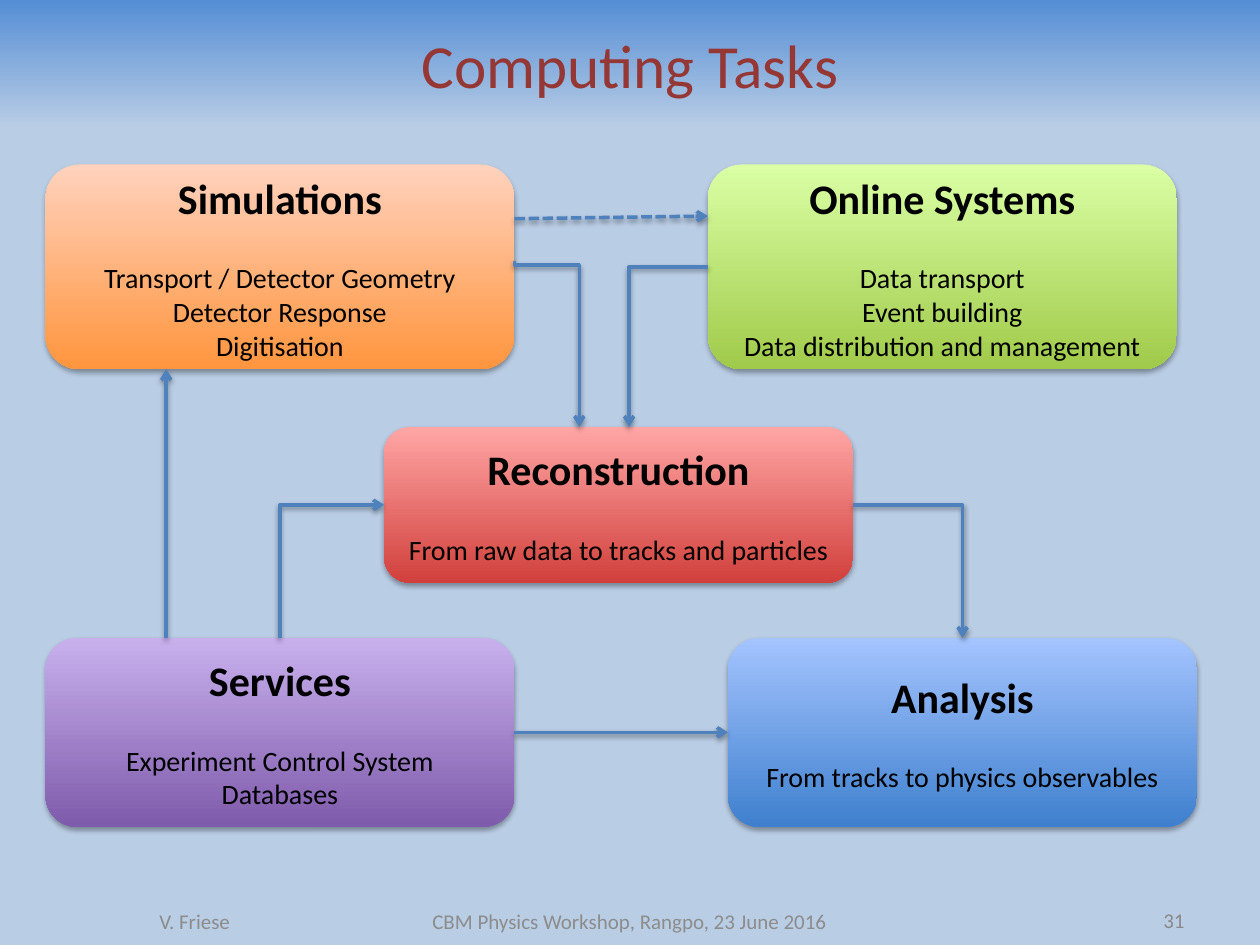
"""Build the Computing Tasks slide: five task boxes linked by arrows."""
from lxml import etree
from pptx import Presentation
from pptx.dml.color import RGBColor
from pptx.enum import dml, shapes, text
from pptx.oxml.ns import qn
from pptx.util import Pt

FONT = "Calibri"
COLORS = {
    "background": "B9CDE5", "banner": "558ED5", "title": "953735",
    "footer": "8C8C8C", "number": "898989", "body": "000000", "arrow": "4F81BD",
}
TITLE = "Computing Tasks"
BOX_WIDTH = 268
TASKS = [
    ("Reconstruction", ["From raw data to tracks and particles"],
     (219.5, 244, 89), ("FFA6A5", "D1403C")),
    ("Simulations", ["Transport / Detector Geometry", "Detector Response", "Digitisation"],
     (26, 94, 117), ("FFD2BD", "FF953E")),
    ("Analysis", ["From tracks to physics observables"],
     (416, 364.5, 108), ("A4C4FF", "3F80CE")),
    ("Online Systems",
     ["Data transport", "Event building", "Data distribution and management"],
     (404.5, 94, 117), ("DAFFA5", "A0CA4A")),
    ("Services", ["Experiment Control System", "Databases"],
     (26, 364.5, 108), ("C8B0ED", "7F5BAB")),
]
ELBOWS = [
    ((294, 149), (331, 244), "bentConnector3", 270, ["flipH"], 2600),
    ((404.5, 152.5), (359.5, 244), "bentConnector2", 180, ["flipV"], None),
    ((160, 364.5), (219.5, 288.5), "bentConnector2", 90, ["flipH", "flipV"], None),
    ((294, 418.5), (416, 418.5), "bentConnector3", 0, [], None),
    ((487.5, 288.5), (550, 364.5), "bentConnector2", 0, [], None),
]
STRAIGHTS = [
    ((294, 125), (404.5, 123.5), True),
    ((95, 364.5), (95, 211), False),
]
FOOTERS = [
    ("CBM Physics Workshop, Rangpo, 23 June 2016", (217.5, 512, 284.5, 29), "CENTER", "footer"),
    ("V. Friese", (36, 512, 150.5, 29), "CENTER", "footer"),
    ("31", (613.5, 511, 70.5, 29), "RIGHT", "number"),
]


def rgb(name):
    return RGBColor.from_string(COLORS.get(name, name))


def fill_gradient(shape, top, bottom):
    shape.fill.gradient()
    shape.fill.gradient_angle = 270
    for stop, color in zip(shape.fill.gradient_stops, (top, bottom)):
        stop.color.rgb = rgb(color)


def add_shadow(shape, opacity, distance):
    effects = etree.SubElement(shape._element.spPr, qn("a:effectLst"))
    shadow = etree.SubElement(effects, qn("a:outerShdw"), blurRad=str(Pt(3.1)),
                              dist=str(Pt(distance)), dir="5400000", rotWithShape="0")
    color = etree.SubElement(shadow, qn("a:srgbClr"), val=COLORS["body"])
    etree.SubElement(color, qn("a:alpha"), val=str(opacity * 1000))


def style(paragraph, size, color, align="CENTER", bold=False):
    paragraph.alignment = getattr(text.PP_ALIGN, align)
    for run in paragraph.runs:
        run.font.name, run.font.size, run.font.bold = FONT, Pt(size), bold
        run.font.color.rgb = rgb(color)


def add_task(slide, heading, details, place, gradient):
    left, top, height = place
    box = slide.shapes.add_shape(shapes.MSO_SHAPE.ROUNDED_RECTANGLE,
                                 Pt(left), Pt(top), Pt(BOX_WIDTH), Pt(height))
    fill_gradient(box, *gradient)
    box.line.fill.background()
    add_shadow(box, 35, 1.8)
    frame = box.text_frame
    frame.text = "\n".join([heading, *details])
    frame.vertical_anchor = text.MSO_ANCHOR.MIDDLE
    first, *rest = frame.paragraphs
    style(first, 24, "body", bold=True)
    for paragraph in rest:
        style(paragraph, 16, "body")
    rest[0].space_before = Pt(22)


def add_arrow(slide, kind, start, end, dashed=False):
    arrow = slide.shapes.add_connector(kind, *map(Pt, start + end))
    arrow.line.color.rgb = rgb("arrow")
    arrow.line.width = Pt(2)
    if dashed:
        arrow.line.dash_style = dml.MSO_LINE.SQUARE_DOT
    etree.SubElement(arrow.line._get_or_add_ln(), qn("a:tailEnd"), type="arrow")
    add_shadow(arrow, 38, 1.6)
    return arrow


def add_elbow(slide, start, end, preset, turn, flips, bend):
    arrow = add_arrow(slide, shapes.MSO_CONNECTOR.ELBOW, start, end)
    width, height = (abs(b - a) for a, b in zip(start, end))
    if turn % 180:
        width, height = height, width
    center_x, center_y = ((a + b) / 2 for a, b in zip(start, end))
    arrow.left, arrow.top = Pt(center_x - width / 2), Pt(center_y - height / 2)
    arrow.width, arrow.height = Pt(width), Pt(height)
    properties = arrow._element.spPr
    transform = properties.find(qn("a:xfrm"))
    transform.set("rot", str(turn * 60000))
    for flip in ("flipH", "flipV"):
        transform.set(flip, str(int(flip in flips)))
    geometry = properties.find(qn("a:prstGeom"))
    geometry.set("prst", preset)
    if bend is not None:
        etree.SubElement(geometry.find(qn("a:avLst")), qn("a:gd"),
                         name="adj1", fmla=f"val {bend}")


def add_footer(slide, words, place, align, color):
    box = slide.shapes.add_textbox(*map(Pt, place))
    frame = box.text_frame
    frame.word_wrap = True
    frame.vertical_anchor = text.MSO_ANCHOR.MIDDLE
    frame.text = words
    style(frame.paragraphs[0], 12, color, align)


def main():
    deck = Presentation()
    deck.slide_width, deck.slide_height = Pt(720), Pt(540)
    slide = deck.slides.add_slide(deck.slide_layouts[5])
    slide.background.fill.solid()
    slide.background.fill.fore_color.rgb = rgb("background")

    title = slide.shapes.title
    title.left, title.top, title.width, title.height = map(Pt, (0, 0, 720, 73.5))
    fill_gradient(title, "banner", "background")
    title.text_frame.text = TITLE
    title.text_frame.vertical_anchor = text.MSO_ANCHOR.MIDDLE
    style(title.text_frame.paragraphs[0], 35, "title")

    for footer in FOOTERS:
        add_footer(slide, *footer)
    for task in TASKS:
        add_task(slide, *task)
    for elbow in ELBOWS:
        add_elbow(slide, *elbow)
    for start, end, dashed in STRAIGHTS:
        add_arrow(slide, shapes.MSO_CONNECTOR.STRAIGHT, start, end, dashed)
    deck.save("out.pptx")


if __name__ == "__main__":
    main()
